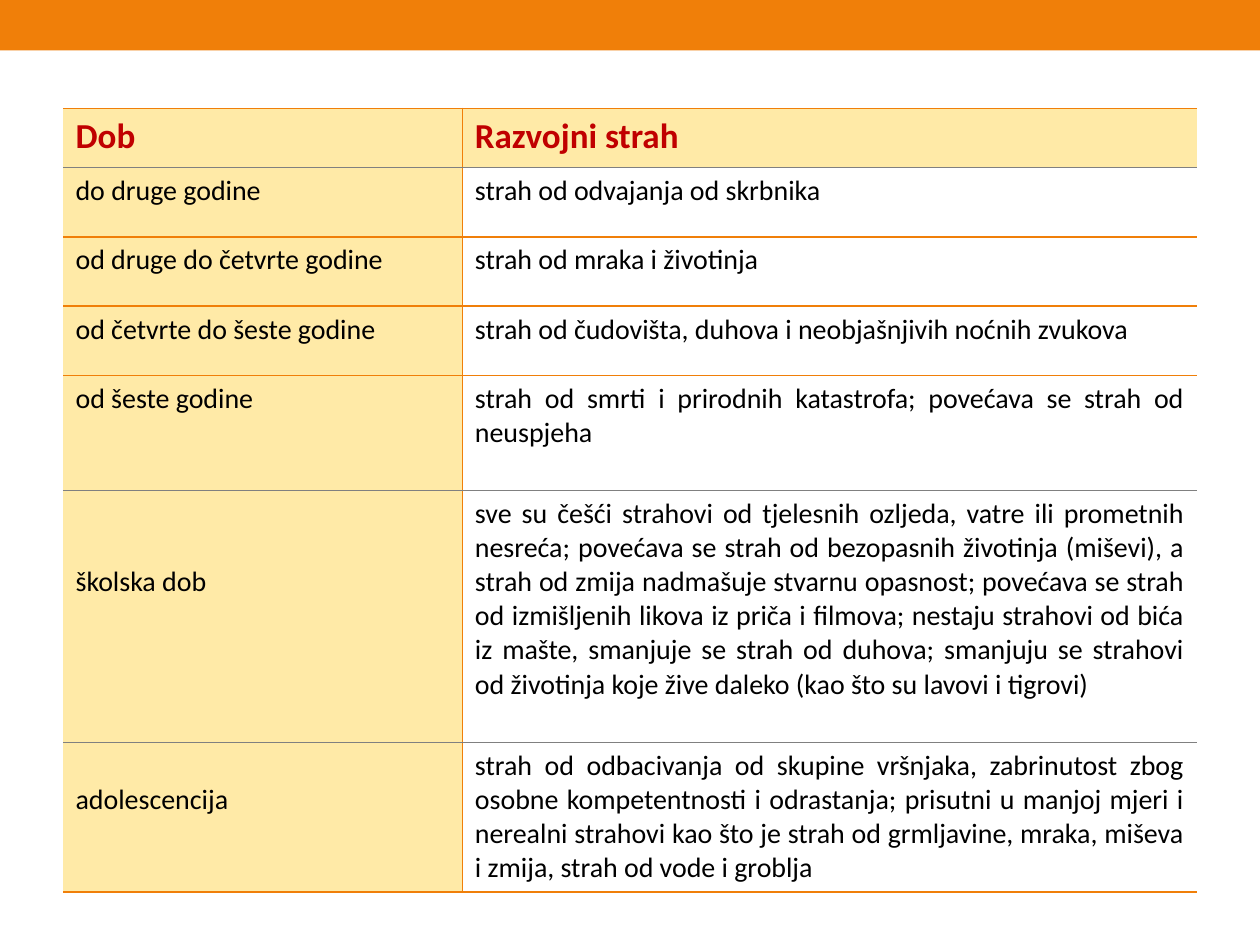
from dataclasses import dataclass

from lxml.etree import SubElement
from pptx import Presentation
from pptx.dml.color import RGBColor as Color
from pptx.enum.shapes import MSO_SHAPE as Shape
from pptx.enum.text import PP_ALIGN as Align
from pptx.oxml.ns import qn
from pptx.util import Inches, Pt


@dataclass(frozen=True)
class Theme:
    font: str = "Calibri"
    head_size: int = 20
    body_size: int = 16
    orange: str = "F07F09"
    cream: str = "FFEAA7"
    white: str = "FFFFFF"
    red: str = "C00000"
    black: str = "000000"
    gray: str = "808080"


THEME = Theme()
PAGE_WIDTH, PAGE_HEIGHT = 10, 7.5
LINE = 0.27  # height of one body line, inches
PADDING = 0.05
ORANGE_RULE = (THEME.orange, 1)
GRAY_RULE = (THEME.gray, 0.5)

COLUMN_WIDTHS = (3.17, 5.83)
HEADER = ("Dob", "Razvojni strah")
HEADER_HEIGHT = 0.47
# age, fear, row height, lines the age is lowered by, rule below, justified
FEARS = (
    ("do druge godine", "strah od odvajanja od skrbnika", 0.55, 0, ORANGE_RULE, False),
    ("od druge do četvrte godine", "strah od mraka i životinja", 0.55, 0, ORANGE_RULE, False),
    ("od četvrte do šeste godine",
     "strah od čudovišta, duhova i neobjašnjivih noćnih zvukova", 0.55, 0, ORANGE_RULE, False),
    ("od šeste godine",
     "strah od smrti i prirodnih katastrofa; povećava se strah od neuspjeha",
     0.91, 0, GRAY_RULE, True),
    ("školska dob",
     "sve su češći strahovi od tjelesnih ozljeda, vatre ili prometnih nesreća; "
     "povećava se strah od bezopasnih životinja (miševi), a strah od zmija nadmašuje "
     "stvarnu opasnost; povećava se strah od izmišljenih likova iz priča i filmova; "
     "nestaju strahovi od bića iz mašte, smanjuje se strah od duhova; smanjuju se "
     "strahovi od životinja koje žive daleko (kao što su lavovi i tigrovi)",
     2.0, 2, GRAY_RULE, True),
    ("adolescencija",
     "strah od odbacivanja od skupine vršnjaka, zabrinutost zbog osobne kompetentnosti "
     "i odrastanja; prisutni u manjoj mjeri i nerealni strahovi kao što je strah od "
     "grmljavine, mraka, miševa i zmija, strah od vode i groblja",
     1.19, 1, ORANGE_RULE, True),
)


def write(frame, text, size=THEME.body_size, color=THEME.black, bold=False, align=Align.LEFT):
    para = frame.paragraphs[0]
    para.alignment = align
    span = para.add_run()
    span.text = text
    span.font.name = THEME.font
    span.font.size = Pt(size)
    span.font.bold = bold
    span.font.color.rgb = Color.from_string(color)


def paint(part, color):
    part.fill.solid()
    part.fill.fore_color.rgb = Color.from_string(color)


def set_borders(cell, left, right, top, bottom):
    """Draw each side as (colour, points), or hide it when None."""
    properties = cell._tc.get_or_add_tcPr()
    sides = zip(("a:lnL", "a:lnR", "a:lnT", "a:lnB"), (left, right, top, bottom))
    for index, (tag, rule) in enumerate(sides):
        line = SubElement(properties, qn(tag))
        properties.insert(index, line)
        if rule is None:
            line.set("w", "0")
            SubElement(line, qn("a:noFill"))
        else:
            color, width = rule
            line.set("w", str(Pt(width)))
            fill = SubElement(line, qn("a:solidFill"))
            SubElement(fill, qn("a:srgbClr")).set("val", color)


def add_band(page, left, top, width, height):
    band = page.shapes.add_shape(
        Shape.RECTANGLE, Inches(left), Inches(top), Inches(width), Inches(height))
    band.shadow.inherit = False
    paint(band, THEME.orange)
    band.line.fill.background()


def add_fear_table(page, left, top, width):
    heights = [HEADER_HEIGHT] + [fear[2] for fear in FEARS]
    table = page.shapes.add_table(
        len(heights), len(COLUMN_WIDTHS), Inches(left), Inches(top),
        Inches(width), Inches(sum(heights))).table
    table.first_row = table.horz_banding = False
    for column, share in zip(table.columns, COLUMN_WIDTHS):
        column.width = Inches(width * share / sum(COLUMN_WIDTHS))
    for row, height in zip(table.rows, heights):
        row.height = Inches(height)

    # Header row
    for index, title in enumerate(HEADER):
        write(table.cell(0, index).text_frame, title,
              size=THEME.head_size, color=THEME.red, bold=True)

    # Age and fear rows
    for index, (age, fear, _, lowered, _, justified) in enumerate(FEARS, start=1):
        age_cell, fear_cell = table.cell(index, 0), table.cell(index, 1)
        write(age_cell.text_frame, age)
        age_cell.margin_top = Inches(PADDING + lowered * LINE)
        write(fear_cell.text_frame, fear, align=Align.JUSTIFY if justified else Align.LEFT)

    # Fills and rules
    rules = [ORANGE_RULE, GRAY_RULE] + [fear[4] for fear in FEARS]
    for index, row in enumerate(table.rows):
        age_cell, fear_cell = row.cells
        above, below = rules[index:index + 2]
        paint(age_cell, THEME.cream)
        paint(fear_cell, THEME.white if index else THEME.cream)
        set_borders(age_cell, None, ORANGE_RULE, above, below)
        set_borders(fear_cell, ORANGE_RULE, None, above, below)


def main():
    deck = Presentation()
    deck.slide_width, deck.slide_height = Inches(PAGE_WIDTH), Inches(PAGE_HEIGHT)
    page = deck.slides.add_slide(deck.slide_layouts[6])
    add_band(page, 0, 0, PAGE_WIDTH, 0.4)
    add_fear_table(page, 0.05 * PAGE_WIDTH, 0.86, 0.9 * PAGE_WIDTH)
    deck.save("out.pptx")


if __name__ == "__main__":
    main()
